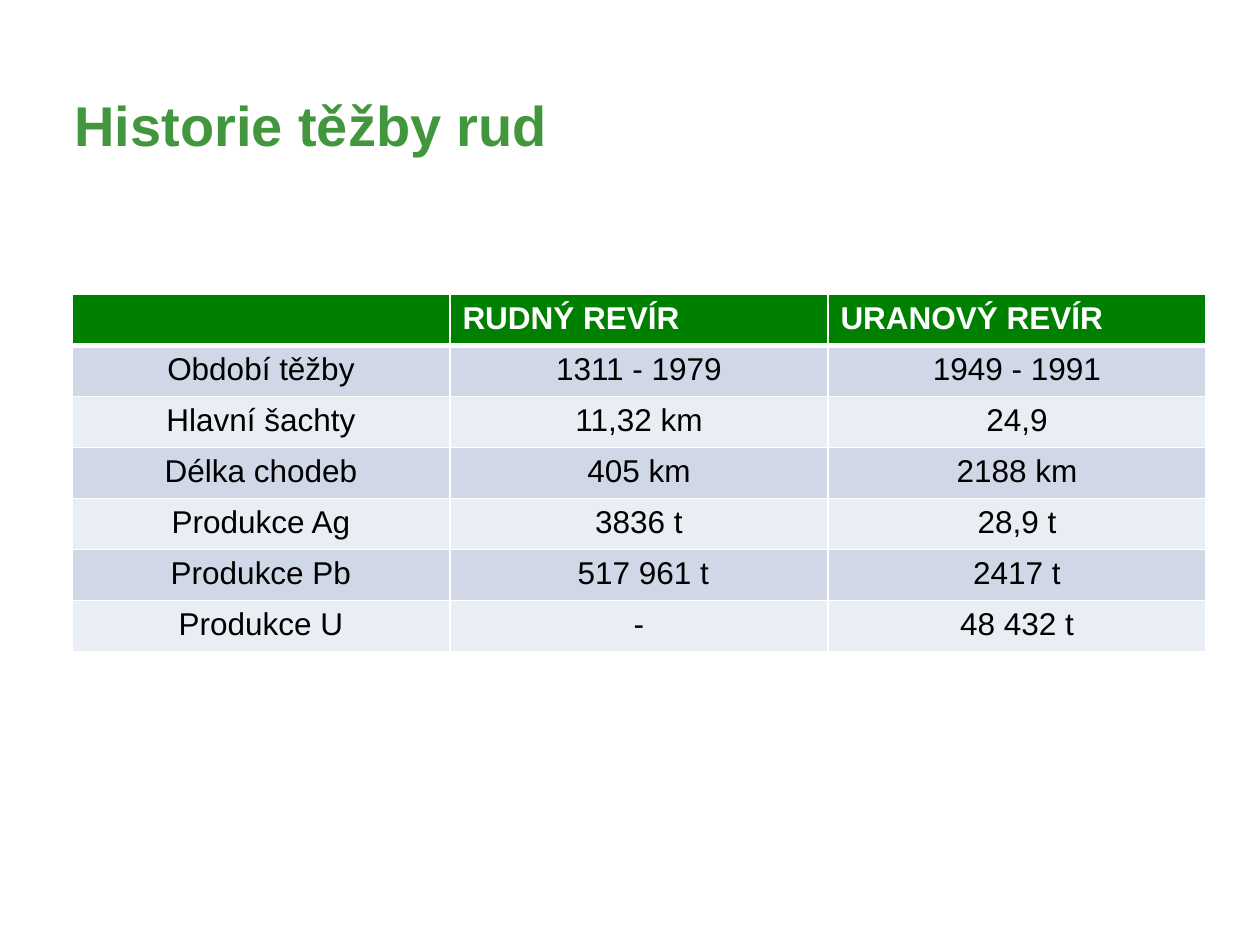
from dataclasses import dataclass

from lxml import etree
from pptx import Presentation
from pptx.dml.color import RGBColor
from pptx.enum.text import MSO_ANCHOR, PP_ALIGN
from pptx.oxml.ns import qn
from pptx.util import Cm, Pt

LEFT, CENTER = PP_ALIGN.LEFT, PP_ALIGN.CENTER
TOP = MSO_ANCHOR.TOP


@dataclass(frozen=True)
class Theme:
    font: str = "Arial"
    title_size: int = 32
    table_size: int = 18
    title: str = "42973E"
    header: str = "008000"
    bands: tuple = ("D0D8E8", "E9EDF4")
    light: str = "FFFFFF"
    dark: str = "000000"


THEME = Theme()

ROWS = [
    ("", "RUDNÝ REVÍR", "URANOVÝ REVÍR"),
    ("Období těžby", "1311 - 1979", "1949 - 1991"),
    ("Hlavní šachty", "11,32 km", "24,9"),
    ("Délka chodeb", "405 km", "2188 km"),
    ("Produkce Ag", "3836 t", "28,9 t"),
    ("Produkce Pb", " 517 961 t", "2417 t"),
    ("Produkce U", "-", "48 432 t"),
]


def add_text(paragraph, text, size, color, bold):
    run = paragraph.add_run()
    run.text = text
    run.font.name = THEME.font
    run.font.size = Pt(size)
    run.font.bold = bold
    run.font.color.rgb = RGBColor.from_string(color)


def set_borders(cell, widths):
    """Draw light borders; widths maps each side (L, R, T, B) to points."""
    properties = cell._tc.get_or_add_tcPr()
    for index, (side, width) in enumerate(widths.items()):
        line = etree.Element(qn(f"a:ln{side}"), w=str(Pt(width)))
        fill = etree.SubElement(line, qn("a:solidFill"))
        etree.SubElement(fill, qn("a:srgbClr"), val=THEME.light)
        properties.insert(index, line)


presentation = Presentation()
presentation.slide_width = Cm(25.4)
presentation.slide_height = Cm(19.05)
slide = presentation.slides.add_slide(presentation.slide_layouts[6])

# Table
table = slide.shapes.add_table(
    len(ROWS), len(ROWS[0]), Cm(1.45), Cm(5.93), Cm(22.86), Cm(7.21)
).table
for column in table.columns:
    column.width = Cm(7.62)
for row in table.rows:
    row.height = Cm(1.03)

for row_index, values in enumerate(ROWS):
    is_header = row_index == 0
    fill_color = THEME.header if is_header else THEME.bands[(row_index - 1) % 2]
    borders = {
        "L": 1,
        "R": 1,
        "T": 3 if row_index == 1 else 1,
        "B": 3 if is_header else 1,
    }
    for column_index, value in enumerate(values):
        cell = table.cell(row_index, column_index)
        cell.fill.solid()
        cell.fill.fore_color.rgb = RGBColor.from_string(fill_color)
        set_borders(cell, borders)
        paragraph = cell.text_frame.paragraphs[0]
        paragraph.alignment = LEFT if is_header else CENTER
        if value:
            text_color = THEME.light if is_header else THEME.dark
            add_text(paragraph, value, THEME.table_size, text_color, is_header)
        else:
            paragraph.font.size = Pt(THEME.table_size)

# Title
title_box = slide.shapes.add_textbox(Cm(1.5), Cm(1.7), Cm(19.3), Cm(1.63))
title_frame = title_box.text_frame
title_frame.word_wrap = True
title_frame.vertical_anchor = TOP
title_frame.margin_left = 0
add_text(title_frame.paragraphs[0], "Historie těžby rud", THEME.title_size, THEME.title, True)

presentation.save("out.pptx")
